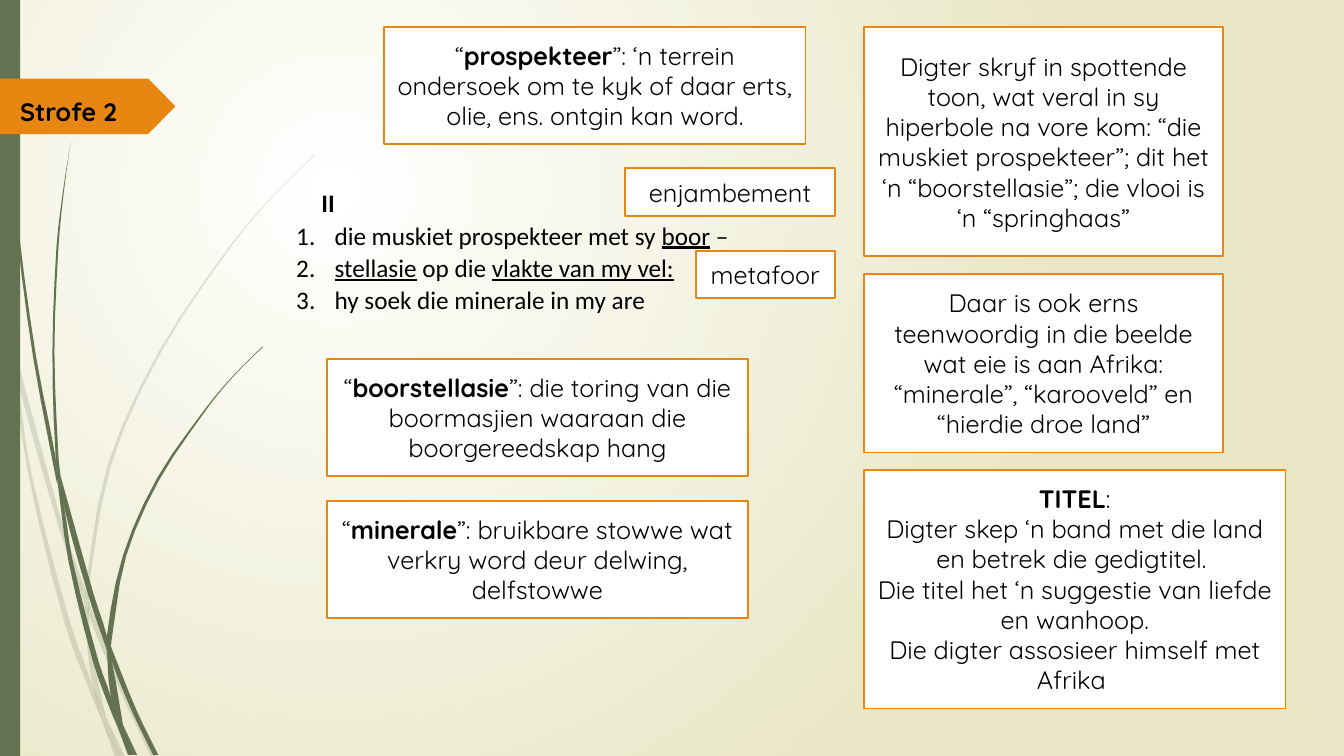
import pptx
import pptx.util
import pptx.dml.color
import pptx.enum.shapes
import pptx.enum.text
import pptx.oxml
import pptx.oxml.ns

Inches = pptx.util.Inches
RGBColor = pptx.dml.color.RGBColor
qn = pptx.oxml.ns.qn

GREEN = RGBColor(0x64, 0x72, 0x52)
ORANGE = RGBColor(0xE7, 0x87, 0x12)
CREAM = RGBColor(0xE8, 0xE6, 0xC4)
WHITE = RGBColor(0xFF, 0xFF, 0xFF)
BLACK = RGBColor(0, 0, 0)
CURVE_STEPS = 3

PALE_BLADES = [
    ([(0, 2.82), (0.09, 3.22), (0.11, 3.5)], [(0, 2.99), (0.1, 3.44), (0.11, 3.5)]),
    ([(0.14, 3.45), (0.17, 3.76), (0.58, 5.22), (0.84, 5.99)], [(0.14, 3.45), (0.62, 5.2), (0.85, 5.86)]),
    ([(0.88, 5.96), (0.88, 6.1), (1.23, 6.94), (1.5, 7.51)],
     [(0.88, 5.96), (0.92, 6.07), (1.27, 6.92), (1.55, 7.51)]),
    ([(1.05, 7.11), (1.19, 7.51)], [(1.05, 7.11), (1.24, 7.51)]),
    ([(0.11, 3.5), (0.28, 4.7), (0.65, 6.21), (0.92, 6.93), (1.01, 7.14)],
     [(0.11, 3.5), (0.17, 3.76), (0.31, 4.69), (0.7, 6.19), (0.93, 6.83), (1.01, 7.14)]),
    ([(0.84, 5.99), (0.87, 6.46), (0.93, 6.83), (1.05, 7.11)],
     [(0.84, 5.99), (0.88, 6.1), (0.91, 6.46), (1.05, 7.11)]),
    ([(3.12, 1.53), (2.68, 1.97), (2.28, 2.44), (1.58, 3.48), (1.07, 4.61), (0.85, 5.84), (0.88, 5.96)],
     [(3.12, 1.54), (2.68, 1.98), (2.29, 2.45), (1.6, 3.49), (1.1, 4.62), (0.88, 5.84), (0.88, 5.96)]),
    ([(1.01, 7.14), (1.14, 7.51)], [(1.01, 7.14), (1.19, 7.51)]),
    ([(0.85, 5.86), (0.84, 5.99), (0.88, 6.1)], [(0.85, 5.86), (0.88, 5.96), (0.88, 6.1)]),
    ([(0.93, 6.83), (1.01, 7.14), (1.19, 7.51)], [(0.93, 6.83), (1.05, 7.11), (1.19, 7.51)]),
]
DARK_BLADES = [
    ([(0.03, 0), (0.07, 1.1), (0.17, 2.33), (0.33, 3.55), (0.56, 4.77), (0.57, 4.81)],
     [(0.04, 0), (0.08, 1.09), (0.19, 2.32), (0.36, 3.55), (0.55, 4.53), (0.57, 4.81)]),
    ([(0.6, 4.72), (0.64, 5.05), (0.88, 5.92), (1.06, 6.45)],
     [(0.6, 4.72), (0.93, 5.9), (1.06, 6.31), (1.06, 6.45)]),
    ([(1.1, 6.41), (1.11, 6.56), (1.32, 7.08), (1.52, 7.49)],
     [(1.1, 6.41), (1.13, 6.49), (1.36, 7.06), (1.57, 7.49)]),
    ([(0.57, 4.77), (0.68, 5.57), (0.93, 6.59), (1.11, 7.08), (1.17, 7.22)],
     [(0.57, 4.77), (0.64, 5.05), (0.72, 5.56), (0.98, 6.57), (1.1, 6.91), (1.17, 7.22)]),
    ([(0.7, 1.41), (0.62, 1.93), (0.56, 2.45), (0.52, 3.49), (0.55, 4.49), (0.6, 4.72)],
     [(0.7, 1.41), (0.63, 1.93), (0.58, 2.45), (0.54, 3.49), (0.58, 4.53), (0.6, 4.72)]),
    ([(1.22, 7.19), (1.33, 7.49)], [(1.22, 7.19), (1.36, 7.49)]),
    ([(0.55, 4.49), (0.57, 4.77), (0.64, 5.05)], [(0.55, 4.49), (0.6, 4.72), (0.64, 5.05)]),
    ([(2.6, 3.44), (2.31, 3.73), (2.04, 4.05), (1.56, 4.74), (1.22, 5.51), (1.06, 6.31), (1.1, 6.41)],
     [(2.61, 3.44), (2.31, 3.74), (2.05, 4.06), (1.58, 4.76), (1.25, 5.52), (1.11, 6.33), (1.1, 6.41)]),
    ([(1.17, 7.22), (1.27, 7.49)], [(1.17, 7.22), (1.31, 7.49)]),
    ([(1.06, 6.45), (1.1, 6.91), (1.22, 7.19)], [(1.06, 6.45), (1.11, 6.56), (1.22, 7.19)]),
    ([(1.06, 6.31), (1.06, 6.45), (1.11, 6.56)], [(1.06, 6.31), (1.1, 6.41), (1.11, 6.56)]),
    ([(1.1, 6.91), (1.17, 7.22), (1.3, 7.49)], [(1.1, 6.91), (1.22, 7.19), (1.33, 7.49)]),
]
VERSES = ["die muskiet prospekteer met sy *boor* –", "*stellasie* op die *vlakte van my vel:*",
          "hy soek die minerale in my are"]
NOTES = [
    ((8.57, 4.66, 4.18, 2.37), [
        "*TITEL*:", "Digter skep ‘n band met die land en betrek die gedigtitel. ",
        "Die titel het ‘n suggestie van liefde en wanhoop.", "Die digter assosieer himself met Afrika "]),
    ((8.57, 2.72, 3.56, 1.77), ["Daar is ook erns teenwoordig in die beelde wat eie is aan Afrika: "
                                "“minerale”, “karooveld” en “hierdie droe land”"]),
    ((8.57, 0.27, 3.56, 2.27), [
        "Digter skryf in spottende toon, wat veral in sy hiperbole na vore kom: "
        "“die muskiet prospekteer”; dit het ‘n “boorstellasie”; die vlooi is ‘n “springhaas”"]),
    ((3.24, 3.56, 4.18, 1.16), [
        "“*boorstellasie*”: die toring van die boormasjien waaraan die boorgereedskap hang"]),
    ((3.24, 4.97, 4.18, 1.16), ["“*minerale*”: bruikbare stowwe wat verkry word deur delwing, delfstowwe"]),
    ((3.81, 0.27, 4.18, 1.16), [
        "“*prospekteer*”: ‘n terrein ondersoek om te kyk of daar erts, olie, ens. ontgin kan word."]),
    ((6.9, 2.49, 1.38, 0.47), ["metafoor"]),
    ((6.2, 1.67, 2.08, 0.47), ["enjambement"]),
]


def make_element(tag, attributes, content=""):
    """Return a drawing element with the given attributes and content."""
    return pptx.oxml.parse_xml(f'<a:{tag} {pptx.oxml.ns.nsdecls("a")} {attributes}>{content}</a:{tag}>')


def paint_background(page):
    """Fill the page with a round gradient from white to cream."""
    fill = page.background.fill
    fill.gradient()
    for stop, color in zip(fill.gradient_stops, (WHITE, CREAM)):
        stop.color.rgb = color
    linear = next(page.element.iter(qn("a:lin")))
    linear.getparent().replace(linear, make_element(
        "path", 'path="circle"', '<a:fillToRect l="50000" t="50000" r="100000" b="100000"/>'))


def paint_shape(shape, color):
    """Give a shape a plain fill without line or shadow."""
    shape.shadow.inherit = False
    shape.fill.solid()
    shape.fill.fore_color.rgb = color
    shape.line.fill.background()


def add_outline(page, points, color):
    """Draw a closed outline through points given in inches."""
    corners = [(Inches(x), Inches(y)) for x, y in points]
    builder = page.shapes.build_freeform(*corners[0])
    builder.add_line_segments(corners[1:], close=True)
    shape = builder.convert_to_shape()
    paint_shape(shape, color)
    return shape


def smooth_edge(points):
    """Return points along a smooth curve that runs down the given points."""
    if len(points) == 2:
        return points
    padded = [points[0], *points, points[-1]]
    slopes = [(c[0] - a[0]) / (c[1] - a[1]) for a, c in zip(padded, padded[2:])]
    curve = []
    for (x, y), (next_x, next_y), slope, next_slope in zip(points, points[1:], slopes, slopes[1:]):
        run, drop = next_x - x, next_y - y
        for t in (step / CURVE_STEPS for step in range(CURVE_STEPS)):
            bend = (1 - t) * (slope * drop - run) - t * (next_slope * drop - run)
            curve.append((x + t * run + t * (1 - t) * bend, y + t * drop))
    return [*curve, points[-1]]


def add_grass(page):
    """Draw the pale blades, then the dark blades over them."""
    for blades, opacity in ((PALE_BLADES, 20), (DARK_BLADES, 100)):
        for left_edge, right_edge in blades:
            blade = add_outline(page, smooth_edge(left_edge) + smooth_edge(right_edge)[::-1], GREEN)
            color = next(blade.element.spPr.iter(qn("a:srgbClr")))
            color.append(make_element("alpha", f'val="{opacity * 1000}"'))


def write_paragraph(para, text, font_name, marked="bold"):
    """Write text whose parts between asterisks take the marked font style."""
    para.font.name, para.font.size = font_name, pptx.util.Pt(18)
    para.font.color.rgb = BLACK
    for index, part in enumerate(text.split("*")):
        if part:
            span = para.add_run()
            span.text = part
            if index % 2:
                setattr(span.font, marked, True)


def add_text_box(page, box):
    """Add a wrapping text box and return its text frame."""
    frame = page.shapes.add_textbox(*map(Inches, box)).text_frame
    frame.word_wrap = True
    return frame


def add_heading(page, box):
    """Draw the orange arrow tag and its heading."""
    left, top, width, height = box
    shoulder, bottom = left + width - 0.27, top + height
    add_outline(page, [(left, top), (shoulder, top), (left + width, top + height / 2),
                       (shoulder, bottom), (left, bottom)], ORANGE)
    frame = add_text_box(page, (left + 0.1, top + 0.13, 1.31, 0.4))
    write_paragraph(frame.paragraphs[0], "*Strofe 2*", "Quicksand")


def add_stanza(page, box):
    """Write the stanza number and its numbered verses."""
    frame = add_text_box(page, box)
    number = frame.paragraphs[0]
    write_paragraph(number, "*II*", "Calibri")
    number.line_spacing = 1.07
    number._p.get_or_add_pPr().set("marL", str(Inches(0.25)))
    for verse in VERSES:
        para = frame.add_paragraph()
        write_paragraph(para, verse, "Calibri", "underline")
        para.line_spacing = 1.07
        properties = para._p.get_or_add_pPr()
        properties.set("marL", str(Inches(0.38)))
        properties.set("indent", str(-Inches(0.38)))
        properties.insert_element_before(make_element("buAutoNum", 'type="arabicPeriod"'), "a:defRPr")


def add_note(page, box, lines):
    """Draw a white note with an orange border and centred lines."""
    note = page.shapes.add_shape(pptx.enum.shapes.MSO_SHAPE.RECTANGLE, *map(Inches, box))
    paint_shape(note, WHITE)
    note.line.color.rgb = ORANGE
    note.line.width = pptx.util.Pt(1.25)
    frame = note.text_frame
    frame.word_wrap = True
    frame.vertical_anchor = pptx.enum.text.MSO_ANCHOR.MIDDLE
    for index, line in enumerate(lines):
        para = frame.add_paragraph() if index else frame.paragraphs[0]
        para.alignment = pptx.enum.text.PP_ALIGN.CENTER
        write_paragraph(para, line, "Quicksand")


def main():
    """Build the slide and save it."""
    deck = pptx.Presentation()
    deck.slide_width, deck.slide_height = Inches(13.33), Inches(7.5)
    page = deck.slides.add_slide(deck.slide_layouts[6])
    paint_background(page)
    add_grass(page)
    bar = page.shapes.add_shape(pptx.enum.shapes.MSO_SHAPE.RECTANGLE, 0, 0, Inches(0.2), Inches(7.5))
    paint_shape(bar, GREEN)
    add_stanza(page, (2.84, 1.79, 6.67, 1.4))
    for box, lines in NOTES:
        add_note(page, box, lines)
    add_heading(page, (0, 0.78, 1.74, 0.55))
    deck.save("out.pptx")


if __name__ == "__main__":
    main()
